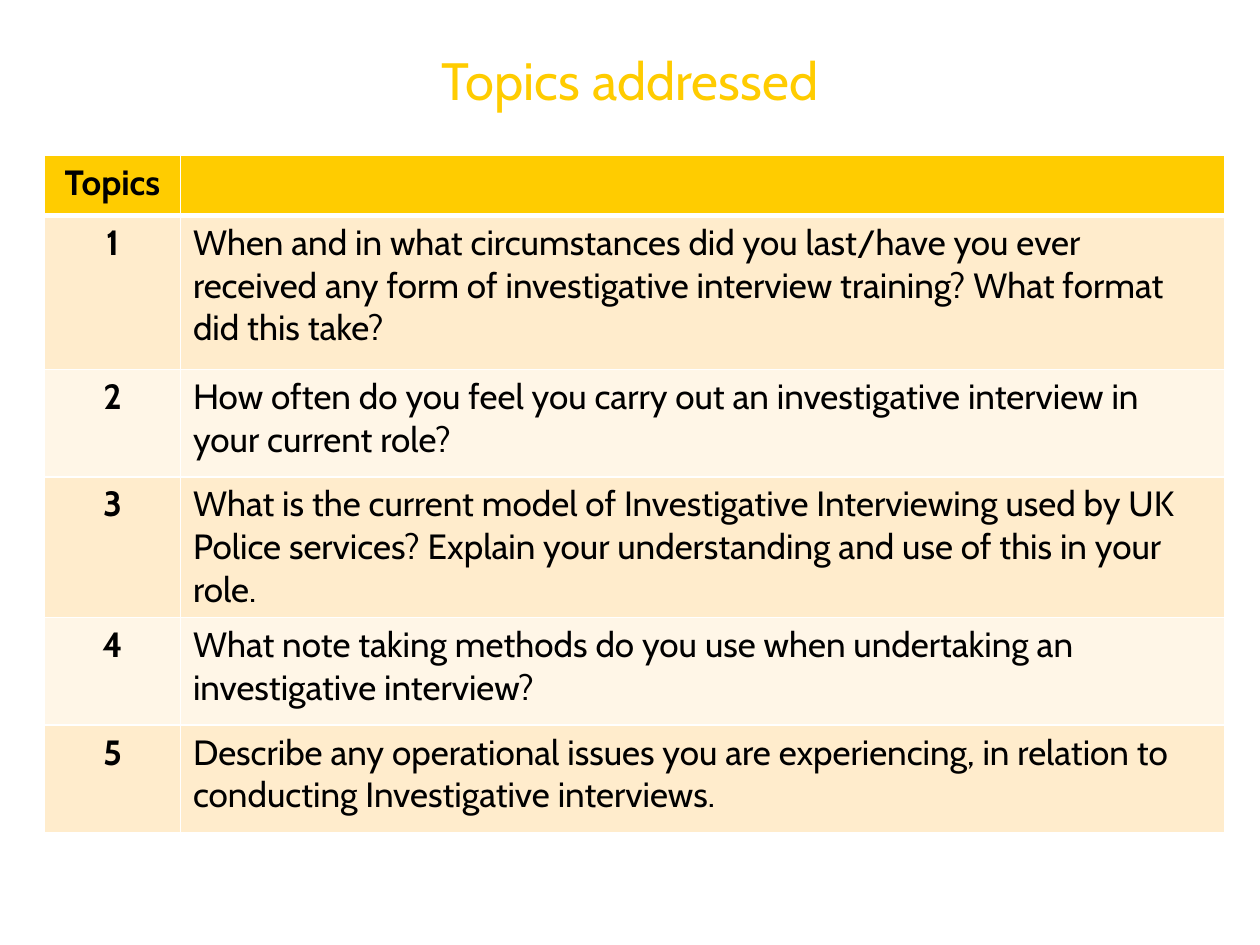
from lxml.etree import SubElement
from pptx import Presentation
from pptx.dml.color import RGBColor
from pptx.enum.text import MSO_ANCHOR, PP_ALIGN
from pptx.oxml.ns import qn
from pptx.util import Pt

COLORS = {
    "gold": "FFCC00",
    "band_dark": "FFECCC",
    "band_light": "FFF6E7",
    "text": "000000",
    "border": "FFFFFF",
}

TOPICS = [
    "When and in what circumstances did you last/have you ever received any "
    "form of investigative interview training? What format did this take?",
    "How often do you feel you carry out an investigative interview in your "
    "current role?",
    "What is the current model of Investigative Interviewing used by UK Police "
    "services? Explain your understanding and use of this in your role.",
    "What note taking methods do you use when undertaking an investigative "
    "interview?",
    "Describe any operational issues you are experiencing, in relation to "
    "conducting Investigative interviews.",
]


def rgb(name):
    return RGBColor.from_string(COLORS[name])


class SlideBuilder:
    font = "Cabin"
    title_size = 30
    body_size = 20

    def __init__(self, s):
        self.s = s

    def add_run(self, p, text, size, color, bold=False):
        r = p.add_run()
        r.text = text
        r.font.name = self.font
        r.font.size = Pt(size)
        r.font.bold = bold
        r.font.color.rgb = rgb(color)

    def title(self, text, left, top, width, height):
        sp = self.s.shapes.title
        sp.left, sp.top, sp.width, sp.height = map(Pt, (left, top, width, height))
        tf = sp.text_frame
        tf.word_wrap = True
        tf.vertical_anchor = MSO_ANCHOR.MIDDLE
        p = tf.paragraphs[0]
        p.alignment = PP_ALIGN.CENTER
        self.add_run(p, text, self.title_size, "gold")

    def borders(self, cell, bottom):
        tc_pr = cell._tc.get_or_add_tcPr()
        for side, width in (("L", 1), ("R", 1), ("T", 1), ("B", bottom)):
            ln = SubElement(tc_pr, qn(f"a:ln{side}"), w=str(Pt(width)))
            fill = SubElement(ln, qn("a:solidFill"))
            SubElement(fill, qn("a:srgbClr"), val=COLORS["border"])

    def cell(self, cell, text, fill, label=False, bottom=1):
        self.borders(cell, bottom)
        cell.fill.solid()
        cell.fill.fore_color.rgb = rgb(fill)
        p = cell.text_frame.paragraphs[0]
        p.alignment = PP_ALIGN.CENTER if label else PP_ALIGN.LEFT
        p.space_after = Pt(3)
        if text:
            self.add_run(p, text, self.body_size, "text", label)

    def table(self, rows, left, top, widths, heights):
        frame = self.s.shapes.add_table(
            len(rows), len(widths), Pt(left), Pt(top),
            Pt(sum(widths)), Pt(sum(heights)))
        tbl = frame.table
        for col, width in zip(tbl.columns, widths):
            col.width = Pt(width)
        for i, (values, height) in enumerate(zip(rows, heights)):
            tbl.rows[i].height = Pt(height)
            if i == 0:
                fill = "gold"
            else:
                fill = "band_dark" if i % 2 else "band_light"
            for j, text in enumerate(values):
                self.cell(tbl.cell(i, j), text, fill, label=j == 0,
                          bottom=3 if i == 0 else 1)


def main():
    prs = Presentation()
    prs.slide_width, prs.slide_height = Pt(720), Pt(540)
    b = SlideBuilder(prs.slides.add_slide(prs.slide_layouts[5]))

    # Heading
    b.title("Topics addressed", 131.8, 21.6, 456.5, 47.5)

    # Numbered topics under a header row
    rows = [("Topics", "")]
    rows += [(str(n), topic) for n, topic in enumerate(TOPICS, 1)]
    b.table(rows, 25.5, 88.8, [77.6, 597], [34.3, 88] + [61.4] * 4)

    prs.save("out.pptx")


if __name__ == "__main__":
    main()
